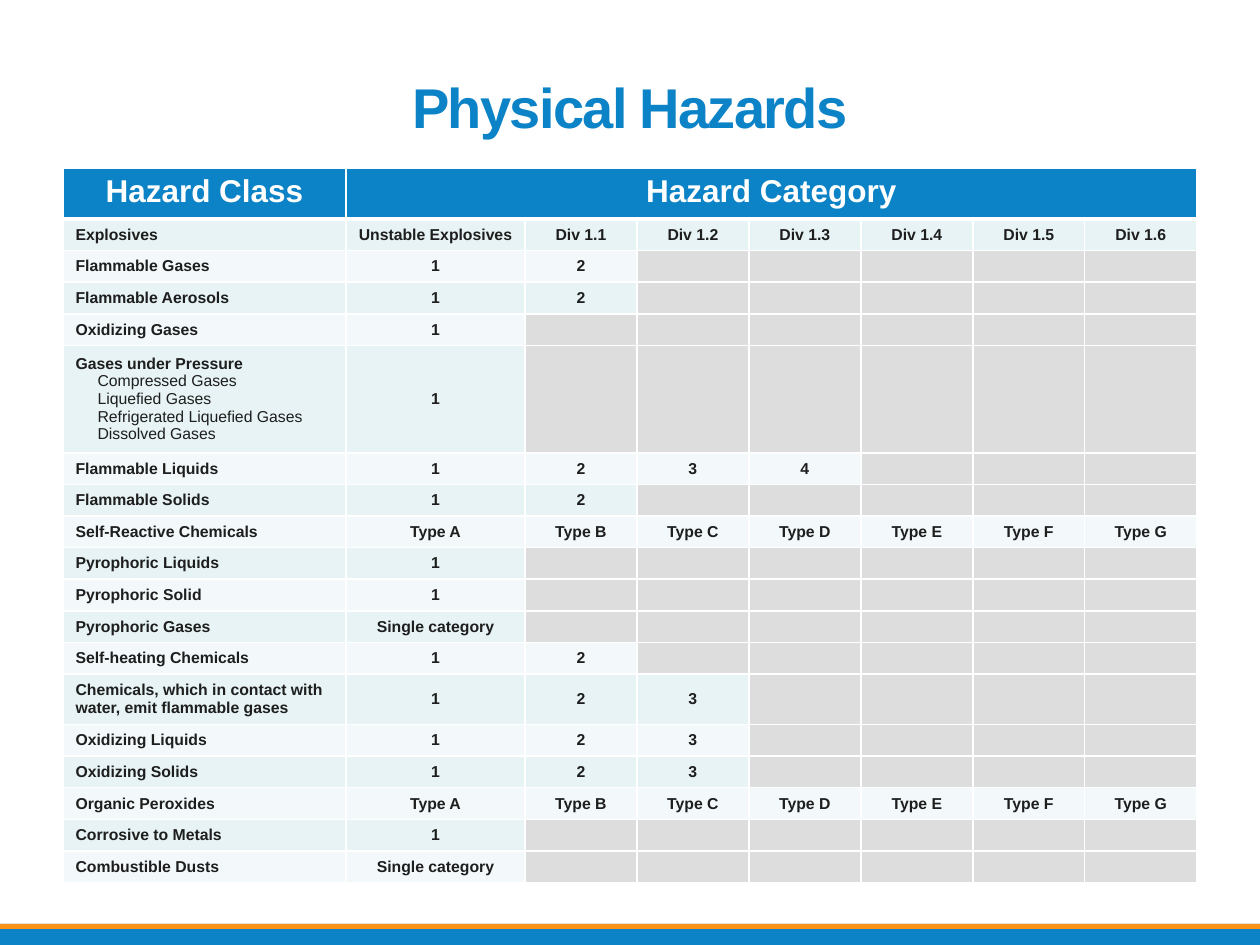
from pptx import Presentation
from pptx.dml.color import RGBColor as RGB
from pptx.enum.shapes import MSO_SHAPE as Shape
from pptx.enum.text import MSO_ANCHOR as Anchor, PP_ALIGN as Align
from pptx.oxml import parse_xml
from pptx.oxml.ns import nsdecls
from pptx.util import Pt

PX = 914400 // 126
WIDE, HIGH = 1260, 945

BLUE = RGB(0x0B, 0x83, 0xC6)
ORANGE = RGB(0xF9, 0x94, 0x19)
WHITE = RGB(0xFF, 0xFF, 0xFF)
INK = RGB(0x1E, 0x1E, 0x1E)
GREY = RGB(0xDD, 0xDD, 0xDD)
BANDS = (RGB(0xE7, 0xF3, 0xF4), RGB(0xF3, 0xF9, 0xFA))

COLS = [283, 179] + [112] * 6
HEAD_H, ROW_H = 51, 25
INDENT = 22

TYPES = [f"Type {letter}" for letter in "ABCDEFG"]
GASES = ["Compressed Gases", "Liquefied Gases",
         "Refrigerated Liquefied Gases", "Dissolved Gases"]

# Hazard class, then its categories; the rest of the row is grey
ROWS = [
    ("Explosives", ["Unstable Explosives"] + [f"Div 1.{n}" for n in range(1, 7)]),
    ("Flammable Gases", "12"),
    ("Flammable Aerosols", "12"),
    ("Oxidizing Gases", "1"),
    ("Gases under Pressure", "1"),
    ("Flammable Liquids", "1234"),
    ("Flammable Solids", "12"),
    ("Self-Reactive Chemicals", TYPES),
    ("Pyrophoric Liquids", "1"),
    ("Pyrophoric Solid", "1"),
    ("Pyrophoric Gases", ["Single category"]),
    ("Self-heating Chemicals", "12"),
    ("Chemicals, which in contact with water, emit flammable gases", "123"),
    ("Oxidizing Liquids", "123"),
    ("Oxidizing Solids", "123"),
    ("Organic Peroxides", TYPES),
    ("Corrosive to Metals", "1"),
    ("Combustible Dusts", ["Single category"]),
]


def px(n):
    return n * PX


def write(para, text, size=9, color=INK, bold=True, align=Align.LEFT,
          indent=0, track=0):
    para.alignment = align
    if indent:
        para._p.get_or_add_pPr().set("marL", str(px(indent)))
    run = para.add_run()
    run.text = text
    font = run.font
    font.name, font.size, font.bold = "Arial", Pt(size), bold
    font.color.rgb = color
    if track:
        run._r.get_or_add_rPr().set("spc", str(track * 100))


def add_bar(slide, top, height, color):
    bar = slide.shapes.add_shape(Shape.RECTANGLE, 0, px(top), px(WIDE), px(height))
    bar.shadow.inherit = False
    bar.fill.solid()
    bar.fill.fore_color.rgb = color
    bar.line.fill.background()


def add_title(slide, text):
    box = slide.shapes.add_textbox(px(63), px(73), px(1134), px(73))
    frame = box.text_frame
    frame.word_wrap = True
    frame.vertical_anchor = Anchor.BOTTOM
    write(frame.paragraphs[0], text, size=32, color=BLUE,
          align=Align.CENTER, track=-1)


def paint(cell, color, top=1, bottom=1):
    """Give a cell its white borders, then its fill."""
    props = cell._tc.get_or_add_tcPr()
    for side, width in (("L", 1), ("R", 1), ("T", top), ("B", bottom)):
        props.append(parse_xml(
            f'<a:ln{side} {nsdecls("a")} w="{Pt(width)}"><a:solidFill>'
            f'<a:srgbClr val="{WHITE}"/></a:solidFill></a:ln{side}>'))
    cell.fill.solid()
    cell.fill.fore_color.rgb = color


def fill_head(table):
    table.cell(0, 1).merge(table.cell(0, len(COLS) - 1))
    for cell in table.rows[0].cells:
        paint(cell, BLUE, bottom=3)
    for col, text in enumerate(("Hazard Class", "Hazard Category")):
        write(table.cell(0, col).text_frame.paragraphs[0], text, size=18,
              color=WHITE, align=Align.CENTER)


def fill_row(table, row, name, values):
    texts = [name, *values]
    for col in range(len(COLS)):
        cell = table.cell(row, col)
        used = col < len(texts)
        paint(cell, BANDS[(row - 1) % 2] if used else GREY,
              top=3 if row == 1 else 1)
        cell.vertical_anchor = Anchor.MIDDLE
        para = cell.text_frame.paragraphs[0]
        if used:
            write(para, texts[col], align=Align.CENTER if col else Align.LEFT)
        else:
            # Small type keeps empty cells from stretching the row
            para._p.append(parse_xml(f'<a:endParaRPr {nsdecls("a")} sz="900"/>'))


def add_grid(slide):
    height = HEAD_H + ROW_H * len(ROWS)
    table = slide.shapes.add_table(len(ROWS) + 1, len(COLS), px(63), px(168),
                                   px(sum(COLS)), px(height)).table
    table.first_row = table.horz_banding = False
    for col, width in zip(table.columns, COLS):
        col.width = px(width)
    for n, row in enumerate(table.rows):
        row.height = px(ROW_H if n else HEAD_H)
    fill_head(table)
    for n, (name, values) in enumerate(ROWS, 1):
        fill_row(table, n, name, values)
        if name == "Gases under Pressure":
            for gas in GASES:
                write(table.cell(n, 0).text_frame.add_paragraph(), gas,
                      bold=False, indent=INDENT)


def main():
    deck = Presentation()
    deck.slide_width, deck.slide_height = px(WIDE), px(HIGH)
    slide = deck.slides.add_slide(deck.slide_layouts[6])
    # Footer bars
    add_bar(slide, 924, 21, BLUE)
    add_bar(slide, 924, 5, ORANGE)
    # Title and table
    add_title(slide, "Physical Hazards")
    add_grid(slide)
    deck.save("out.pptx")


if __name__ == "__main__":
    main()
